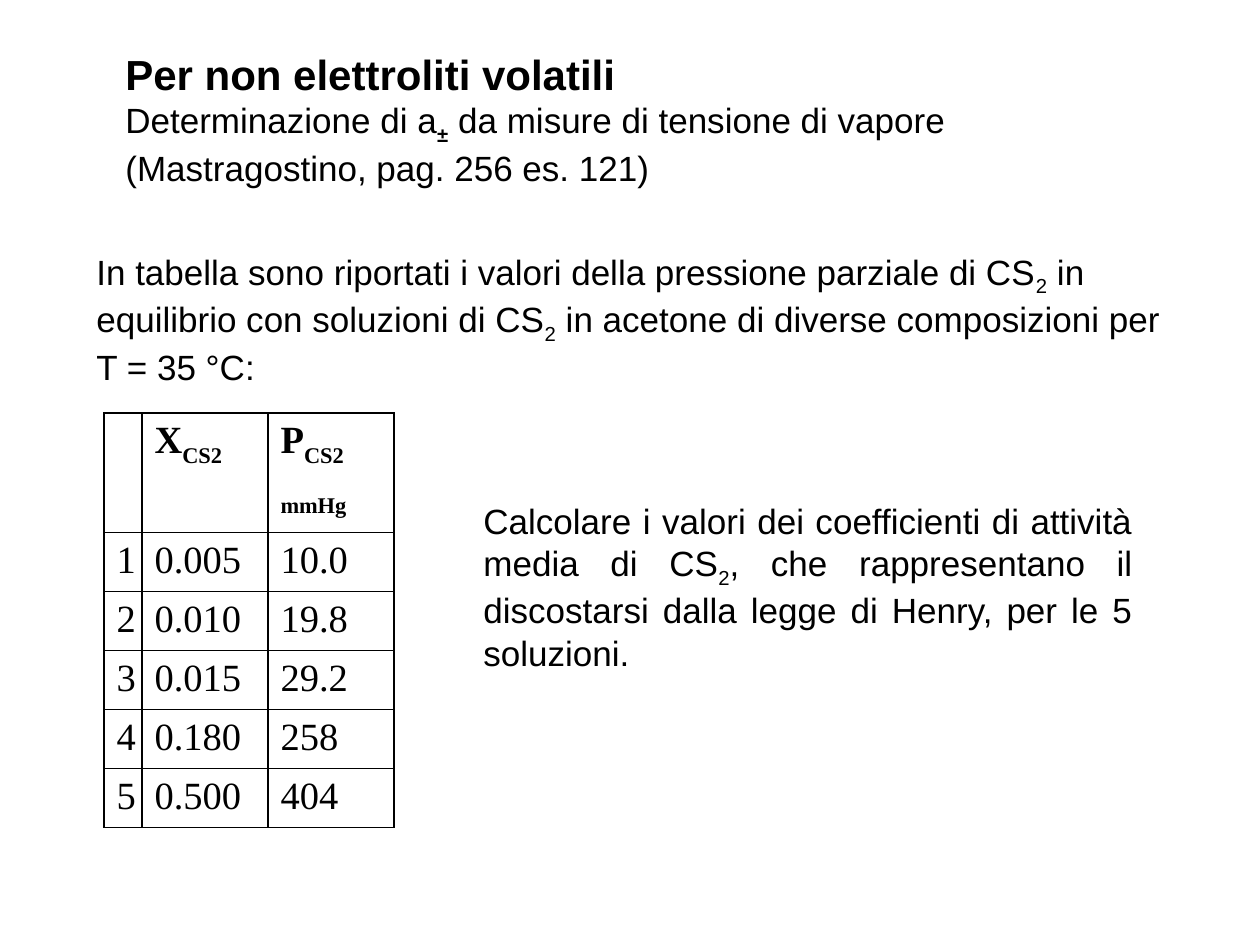
"""Builds the slide on activity of volatile non-electrolytes."""
from lxml import etree
from pptx import Presentation
from pptx.dml.color import RGBColor
from pptx.enum import text
from pptx.oxml import ns
from pptx.util import Emu, Pt

PX = 914400 / 126
BLACK = "000000"
SUB, LOW = -25, -30

# Each run: text, size, bold, baseline shift in percent
TEXT_BOXES = [
    {"at": (113, 45, 1081, 147), "anchor": text.MSO_ANCHOR.MIDDLE, "align": text.PP_ALIGN.JUSTIFY,
     "paragraphs": [
         [("Per non elettroliti volatili", 24, True, 0)],
         [("Determinazione di a", 20, False, 0), ("±", 20, True, SUB),
          (" da misure di tensione di vapore", 20, False, 0)],
         [("(Mastragostino, pag. 256 es. 121)", 20, False, 0)]]},
    {"at": (84, 244, 1091, 139), "anchor": text.MSO_ANCHOR.TOP, "align": text.PP_ALIGN.LEFT,
     "paragraphs": [
         [("In tabella sono riportati i valori della pressione parziale di CS", 20, False, 0),
          ("2", 20, False, SUB), (" in equilibrio con soluzioni di CS", 20, False, 0),
          ("2", 20, False, SUB),
          (" in acetone di diverse composizioni per T = 35 °C:", 20, False, 0)]]},
    {"at": (471, 493, 674, 180), "anchor": text.MSO_ANCHOR.TOP, "align": text.PP_ALIGN.JUSTIFY,
     "paragraphs": [
         [("Calcolare i valori dei coefficienti di attività media di CS", 20, False, 0),
          ("2", 20, False, SUB),
          (", che rappresentano il discostarsi dalla legge di Henry, per le 5 soluzioni.",
           20, False, 0)]]},
]
TABLE_ORIGIN = (104, 413)
COLUMN_WIDTHS = [38, 126, 126]
HEADER_HEIGHT, ROW_HEIGHT = 105, 59
HEADER = [
    [],
    [("X", 22, True, 0), ("CS2", 22, True, SUB)],
    [("P", 22, True, 0), ("CS2 ", 22, True, SUB), ("mmHg", 22, True, LOW)],
]
MEASURES = [("0.005", "10.0"), ("0.010", "19.8"), ("0.015", "29.2"),
            ("0.180", "258"), ("0.500", "404")]


def px(value):
    return Emu(round(value * PX))


def color(value):
    return RGBColor.from_string(value)


def add_runs(paragraph, runs, font_name):
    for words, size, bold, baseline in runs:
        run = paragraph.add_run()
        run.text = words
        run.font.name = font_name
        run.font.size = Pt(size)
        run.font.bold = bold
        run.font.color.rgb = color(BLACK)
        if baseline:
            run.font._element.set("baseline", str(baseline * 1000))


def add_text_box(slide, box):
    frame = slide.shapes.add_textbox(*map(px, box["at"])).text_frame
    frame.word_wrap = True
    frame.vertical_anchor = box["anchor"]
    for index, runs in enumerate(box["paragraphs"]):
        paragraph = frame.add_paragraph() if index else frame.paragraphs[0]
        paragraph.alignment = box["align"]
        add_runs(paragraph, runs, "Arial")


def add_borders(cell):
    properties = cell._tc.get_or_add_tcPr()
    for index, side in enumerate(("lnL", "lnR", "lnT", "lnB")):
        line = etree.Element(ns.qn(f"a:{side}"), w=str(Pt(1)))
        fill = etree.SubElement(line, ns.qn("a:solidFill"))
        etree.SubElement(fill, ns.qn("a:srgbClr"), val=BLACK)
        properties.insert(index, line)


def add_measures(slide):
    rows = [HEADER] + [[[(value, 22, False, 0)] for value in (str(number), *pair)]
                       for number, pair in enumerate(MEASURES, 1)]
    heights = [HEADER_HEIGHT] + [ROW_HEIGHT] * len(MEASURES)
    size = (sum(COLUMN_WIDTHS), sum(heights))
    table = slide.shapes.add_table(len(rows), len(COLUMN_WIDTHS),
                                   *map(px, TABLE_ORIGIN + size)).table
    table.first_row = table.horz_banding = False
    for column, width in zip(table.columns, COLUMN_WIDTHS):
        column.width = px(width)
    for row, height, contents in zip(table.rows, heights, rows):
        row.height = px(height)
        for cell, runs in zip(row.cells, contents):
            cell.fill.background()
            add_borders(cell)
            add_runs(cell.text_frame.paragraphs[0], runs, "Times New Roman")


def main():
    presentation = Presentation()
    presentation.slide_width, presentation.slide_height = px(1260), px(945)
    slide = presentation.slides.add_slide(presentation.slide_layouts[6])
    for box in TEXT_BOXES:
        add_text_box(slide, box)
    add_measures(slide)
    presentation.save("out.pptx")


if __name__ == "__main__":
    main()
